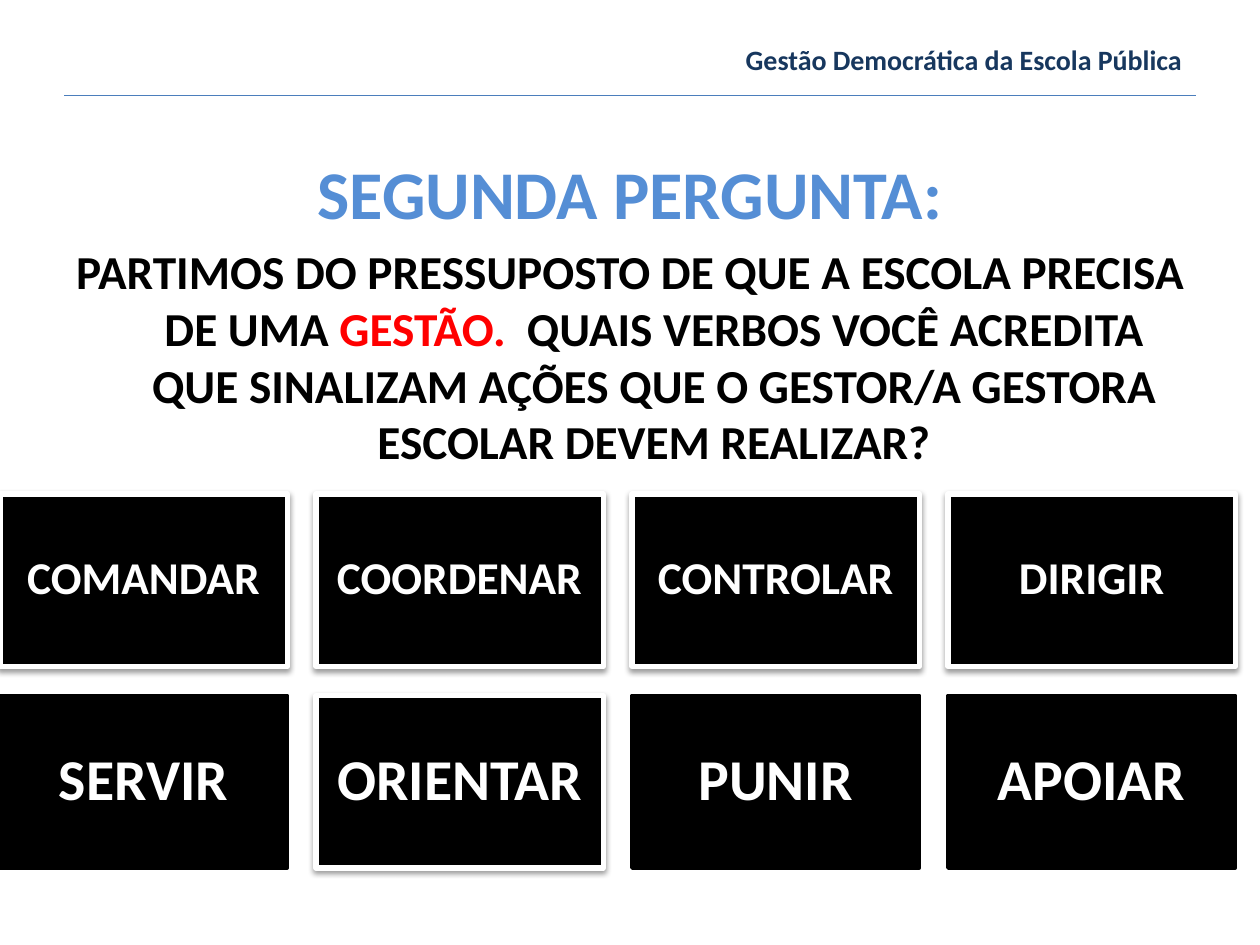
import pptx
import pptx.dml.color
import pptx.enum.shapes
import pptx.enum.text
import pptx.oxml
import pptx.util
from pptx.util import Inches, Pt

ALIGN = pptx.enum.text.PP_ALIGN
HEADER = "Gestão Democrática da Escola Pública"
QUESTION = [  # size, space before, runs of (text, colour)
    (39, 0, [("SEGUNDA PERGUNTA:", "558ED5")]),
    (27, 5.4, [
        ("PARTIMOS DO PRESSUPOSTO DE QUE A ESCOLA PRECISA DE UMA ", "000000"),
        ("GESTÃO. ", "FF0000"),
        (" QUAIS VERBOS VOCÊ ACREDITA QUE SINALIZAM AÇÕES QUE O "
         "GESTOR/A GESTORA ESCOLAR DEVEM REALIZAR?", "000000"),
    ]),
]
VERB_ROWS = [  # top, text size, inset, verbs
    (3.92, 26, 0.11, ["COMANDAR", "COORDENAR", "CONTROLAR", "DIRIGIR"]),
    (5.52, 33, 0.14, ["SERVIR", "ORIENTAR", "PUNIR", "APOIAR"]),
]
FLAT_VERBS = {"SERVIR", "PUNIR", "APOIAR"}
CARD_WIDTH, CARD_HEIGHT, CARD_STEP = 2.28, 1.37, 2.508
NAMESPACE = 'xmlns:a="http://schemas.openxmlformats.org/drawingml/2006/main"'
CARD_SHADOW = (
    f'<a:effectLst {NAMESPACE}><a:outerShdw blurRad="{Pt(3.1)}" dist="{Pt(1.6)}" '
    'dir="5400000" rotWithShape="0"><a:srgbClr val="000000">'
    '<a:alpha val="38000"/></a:srgbClr></a:outerShdw></a:effectLst>'
)


def rgb(value):
    return pptx.dml.color.RGBColor.from_string(value)


def add_run(paragraph, text, size, colour):
    run = paragraph.add_run()
    run.text = text
    run.font.name = "Calibri"
    run.font.size = Pt(size)
    run.font.bold = True
    run.font.color.rgb = rgb(colour)


def add_text_box(slide, left, top, width, height):
    box = slide.shapes.add_textbox(Inches(left), Inches(top), Inches(width), Inches(height))
    box.text_frame.word_wrap = True
    return box.text_frame


def add_question(slide):
    frame = add_text_box(slide, 0.5, 1.15, 9, 5.83)
    for index, (size, space, runs) in enumerate(QUESTION):
        paragraph = frame.add_paragraph() if index else frame.paragraphs[0]
        paragraph.alignment = ALIGN.CENTER
        paragraph.space_before = Pt(space)
        properties = paragraph._p.get_or_add_pPr()
        properties.set("marL", str(Inches(0.38)))
        properties.set("indent", str(Inches(-0.38)))
        for text, colour in runs:
            add_run(paragraph, text, size, colour)


def add_header(slide):
    rule = slide.shapes.add_connector(
        pptx.enum.shapes.MSO_CONNECTOR.STRAIGHT,
        Inches(0.51), Inches(0.76), Inches(9.49), Inches(0.76))
    rule.line.color.rgb = rgb("4B7EBC")
    rule.line.width = Pt(0.75)
    rule._element.spPr.append(pptx.oxml.parse_xml(f"<a:effectLst {NAMESPACE}/>"))
    paragraph = add_text_box(slide, 3.5, 0.29, 5.98, 0.37).paragraphs[0]
    paragraph.alignment = ALIGN.RIGHT
    add_run(paragraph, HEADER, 16, "17375E")


def add_card(slide, verb, left, top, size, inset):
    card = slide.shapes.add_shape(
        pptx.enum.shapes.MSO_SHAPE.RECTANGLE,
        Inches(left), Inches(top), Inches(CARD_WIDTH), Inches(CARD_HEIGHT))
    flat = verb in FLAT_VERBS
    card.fill.solid()
    card.fill.fore_color.rgb = rgb("000000")
    card.line.color.rgb = rgb("000000" if flat else "FFFFFF")
    card.line.width = Pt(2 if flat else 3)
    if flat:
        card.shadow.inherit = False
    else:
        card._element.spPr.append(pptx.oxml.parse_xml(CARD_SHADOW))
    frame = card.text_frame
    frame.word_wrap = True
    frame.vertical_anchor = pptx.enum.text.MSO_ANCHOR.MIDDLE
    frame.margin_left = frame.margin_right = Inches(inset)
    frame.margin_top = frame.margin_bottom = Inches(inset)
    paragraph = frame.paragraphs[0]
    paragraph.alignment = ALIGN.CENTER
    paragraph.line_spacing = 0.9
    add_run(paragraph, verb, size, "FFFFFF")


def main():
    presentation = pptx.Presentation()
    presentation.slide_width, presentation.slide_height = Inches(10), Inches(7.5)
    slide = presentation.slides.add_slide(presentation.slide_layouts[6])
    add_question(slide)
    add_header(slide)
    for top, size, inset, verbs in VERB_ROWS:
        for column, verb in enumerate(verbs):
            add_card(slide, verb, column * CARD_STEP, top, size, inset)
    presentation.save("out.pptx")


if __name__ == "__main__":
    main()
